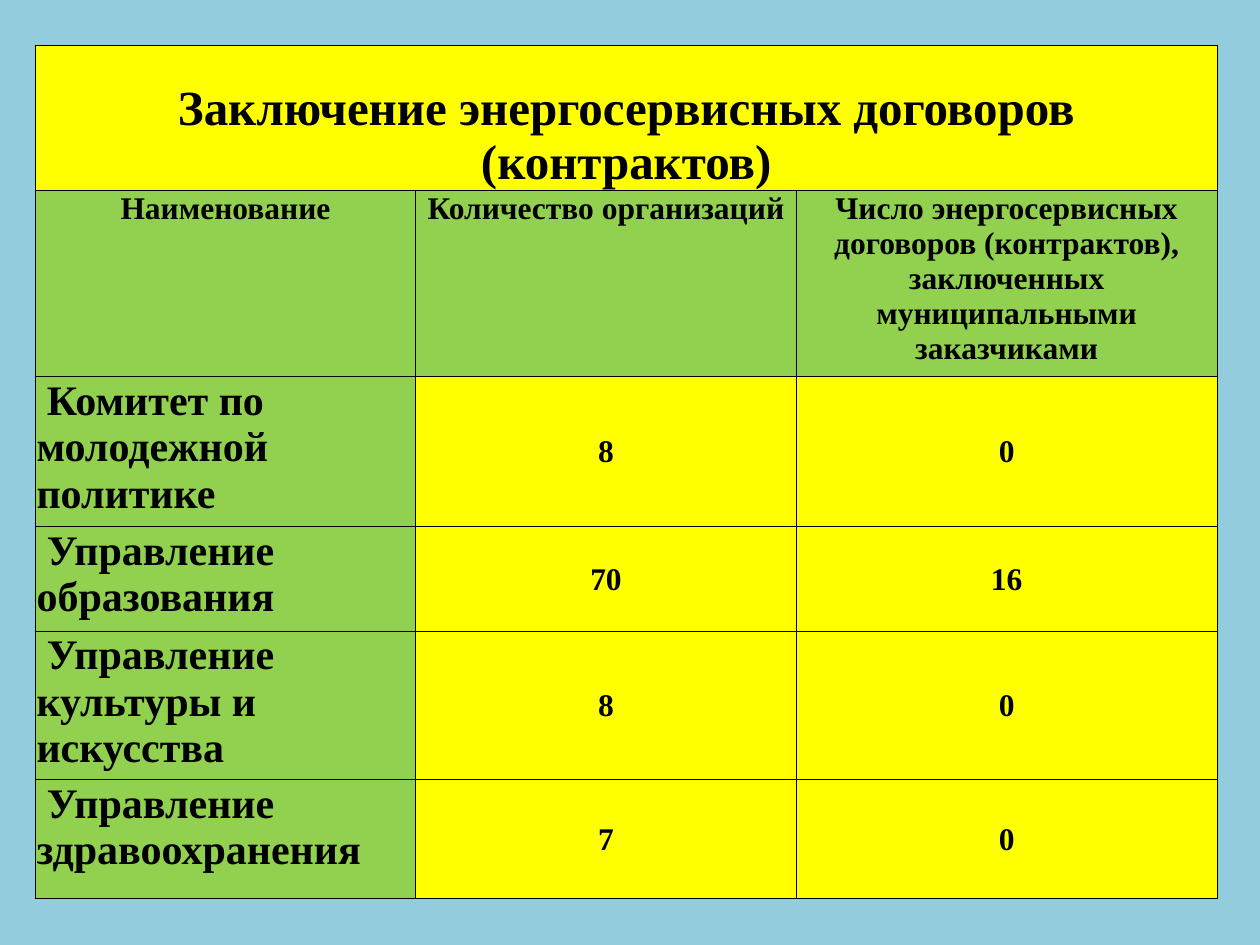
from dataclasses import dataclass

from lxml import etree
from pptx import Presentation
from pptx.dml.color import RGBColor
from pptx.enum.text import MSO_ANCHOR, PP_ALIGN
from pptx.oxml.ns import qn
from pptx.util import Inches, Pt

LEFT, CENTER = PP_ALIGN.LEFT, PP_ALIGN.CENTER
TOP, MIDDLE, BOTTOM = MSO_ANCHOR.TOP, MSO_ANCHOR.MIDDLE, MSO_ANCHOR.BOTTOM

SKY = RGBColor(0x93, 0xCD, 0xDD)
YELLOW = RGBColor(0xFF, 0xFF, 0x00)
GREEN = RGBColor(0x92, 0xD0, 0x50)
BLACK = RGBColor(0x00, 0x00, 0x00)
FONT = "Times New Roman"

TABLE_LEFT, TABLE_TOP = 0.28, 0.36
COL_WIDTHS = [3.02, 3.02, 3.34]
ROW_HEIGHTS = [1.15, 1.48, 1.19, 0.83, 1.18, 0.94]
BORDER_WIDTH = Pt(0.5)

TITLE = "Заключение энергосервисных договоров (контрактов)"
HEADERS = [
    "Наименование",
    "Количество организаций",
    "Число энергосервисных договоров (контрактов), "
    "заключенных муниципальными заказчиками",
]
# Department, organizations, contracts
DEPARTMENTS = [
    (" Комитет по молодежной политике", 8, 0),
    (" Управление образования", 70, 16),
    (" Управление культуры и искусства", 8, 0),
    (" Управление здравоохранения", 7, 0),
]


@dataclass(frozen=True)
class CellStyle:
    fill: RGBColor
    size: int
    align: PP_ALIGN
    anchor: MSO_ANCHOR


TITLE_STYLE = CellStyle(YELLOW, 28, CENTER, BOTTOM)
HEADER_STYLE = CellStyle(GREEN, 18, CENTER, TOP)
NAME_STYLE = CellStyle(GREEN, 24, LEFT, TOP)
VALUE_STYLE = CellStyle(YELLOW, 18, CENTER, MIDDLE)


def set_borders(cell) -> None:
    """Line all four sides; lines must precede the fill in the cell's XML."""
    tc_pr = cell._tc.get_or_add_tcPr()
    for i, side in enumerate(("a:lnL", "a:lnR", "a:lnT", "a:lnB")):
        ln = etree.Element(qn(side), w=str(BORDER_WIDTH))
        fill = etree.SubElement(ln, qn("a:solidFill"))
        etree.SubElement(fill, qn("a:srgbClr"), val=str(BLACK))
        tc_pr.insert(i, ln)


def style_cell(cell, style: CellStyle) -> None:
    cell.fill.solid()
    cell.fill.fore_color.rgb = style.fill
    cell.vertical_anchor = style.anchor
    cell.margin_left = cell.margin_right = cell.margin_top = Inches(0.01)
    cell.margin_bottom = 0
    set_borders(cell)


def write_cell(cell, text: str, style: CellStyle) -> None:
    p = cell.text_frame.paragraphs[0]
    p.alignment = style.align
    r = p.add_run()
    r.text = text
    r.font.name = FONT
    r.font.size = Pt(style.size)
    r.font.bold = True
    r.font.color.rgb = BLACK


def main() -> None:
    prs = Presentation()
    prs.slide_width, prs.slide_height = Inches(10), Inches(7.5)
    s = prs.slides.add_slide(prs.slide_layouts[6])
    s.background.fill.solid()
    s.background.fill.fore_color.rgb = SKY

    # Table grid
    table = s.shapes.add_table(
        len(ROW_HEIGHTS), len(COL_WIDTHS),
        Inches(TABLE_LEFT), Inches(TABLE_TOP),
        Inches(sum(COL_WIDTHS)), Inches(sum(ROW_HEIGHTS)),
    ).table
    table.first_row = table.horz_banding = False
    for col, width in zip(table.columns, COL_WIDTHS):
        col.width = Inches(width)
    for row, height in zip(table.rows, ROW_HEIGHTS):
        row.height = Inches(height)

    # Title across all columns
    for cell in table.rows[0].cells:
        style_cell(cell, TITLE_STYLE)
    table.cell(0, 0).merge(table.cell(0, len(COL_WIDTHS) - 1))
    write_cell(table.cell(0, 0), TITLE, TITLE_STYLE)

    # Headers and departments
    body = [(HEADERS, [HEADER_STYLE] * 3)]
    body += [(d, [NAME_STYLE, VALUE_STYLE, VALUE_STYLE]) for d in DEPARTMENTS]
    for i, (values, styles) in enumerate(body, start=1):
        for cell, value, style in zip(table.rows[i].cells, values, styles):
            style_cell(cell, style)
            write_cell(cell, str(value), style)

    prs.save("out.pptx")


if __name__ == "__main__":
    main()
